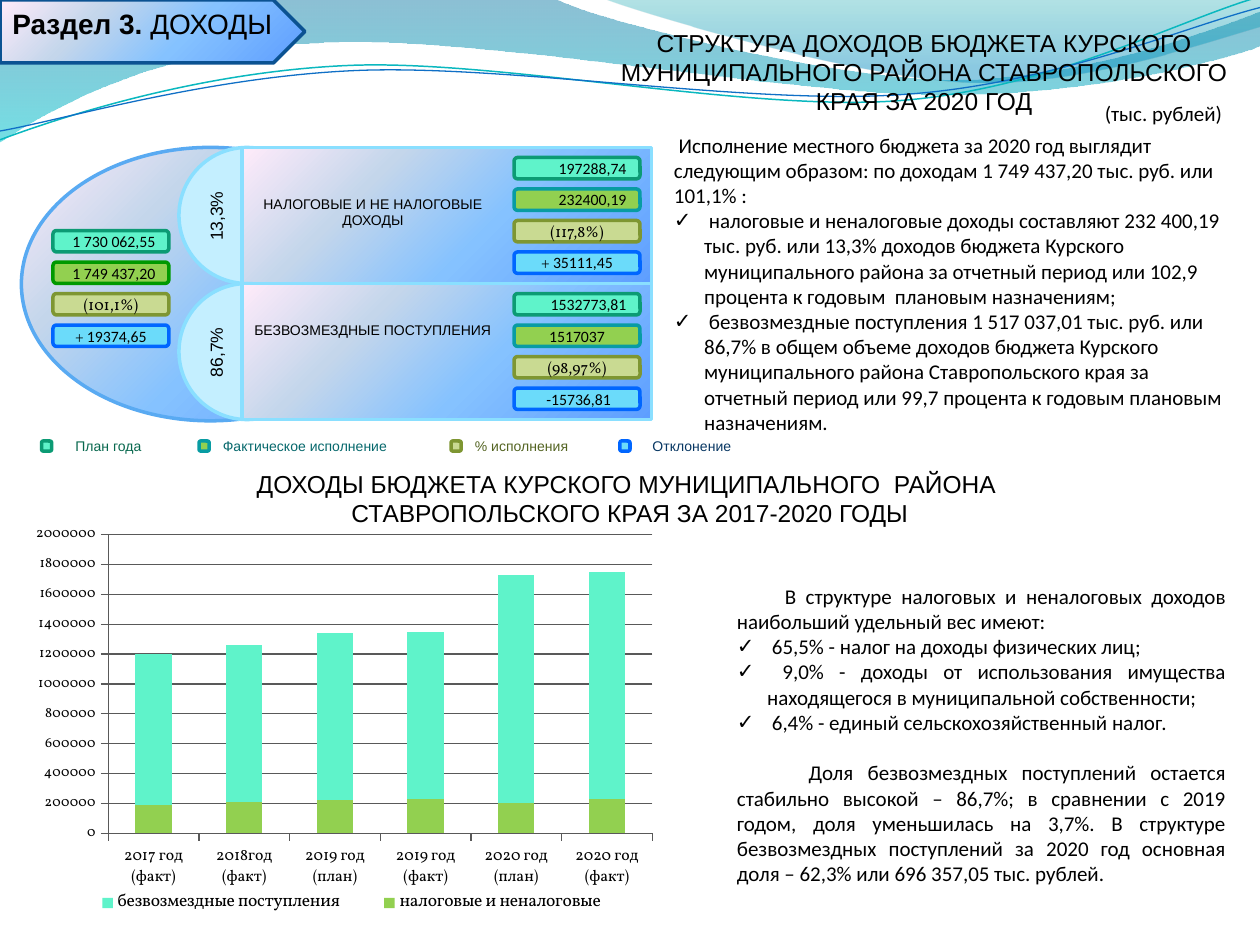
from lxml.etree import SubElement
from pptx import Presentation
from pptx.chart.data import CategoryChartData
from pptx.dml.color import RGBColor
from pptx.enum.chart import XL_CHART_TYPE, XL_LEGEND_POSITION, XL_TICK_MARK
from pptx.enum.shapes import MSO_SHAPE
from pptx.enum.text import MSO_ANCHOR, PP_ALIGN
from pptx.oxml.ns import qn
from pptx.util import Inches, Pt

LEFT, CENTER, RIGHT, JUSTIFY = PP_ALIGN.LEFT, PP_ALIGN.CENTER, PP_ALIGN.RIGHT, PP_ALIGN.JUSTIFY
SKY = [(0, "5E9EFF", 100), (40, "85C2FF", 100), (70, "C4D6EB", 100), (100, "FFEBFA", 100)]
INDICATORS = [("5FF3CA", "0C9B74"), ("92D050", "089CA3"), ("C9DA92", "7E9632"), ("6BDBFA", "0066FF")]


def rgb(value):
    return RGBColor.from_string(value)


def child(parent, tag, **attributes):
    return SubElement(parent, qn(tag), {key: str(value) for key, value in attributes.items()})


def write(frame, text, size=12, font="Calibri", color="000000", bold=False, align=LEFT,
          join=False, bullet=False, first_indent=0, before=0):
    paragraph = frame.paragraphs[-1]
    if paragraph.runs and not join:
        paragraph = frame.add_paragraph()
    paragraph.alignment = align
    if before:
        paragraph.space_before = Pt(before)
    properties = paragraph._p.get_or_add_pPr()
    if bullet:
        properties.set("marL", str(Inches(0.24)))
        properties.set("indent", str(-Inches(0.24)))
        child(properties, "a:buFont", typeface="Arial")
        child(properties, "a:buChar", char="✓")
    elif first_indent:
        properties.set("indent", str(Inches(first_indent)))
    run = paragraph.add_run()
    run.text = text
    run.font.size, run.font.name, run.font.bold = Pt(size), font, bold
    run.font.color.rgb = rgb(color)


class SlideBuilder:
    def __init__(self, slide):
        self.slide = slide

    def paint(self, shape, fill=None, line=None, width=2, angle=225):
        shape.shadow.inherit = False
        if isinstance(fill, str):
            shape.fill.solid()
            shape.fill.fore_color.rgb = rgb(fill)
        else:
            shape.fill.background()
        if isinstance(fill, list):
            properties = shape.element.spPr
            blank = properties.find(qn("a:noFill"))
            gradient = child(properties, "a:gradFill", rotWithShape=1)
            properties.replace(blank, gradient)
            stops = child(gradient, "a:gsLst")
            for position, color, opacity in fill:
                stop = child(stops, "a:gs", pos=position * 1000)
                tint = child(stop, "a:srgbClr", val=color)
                if opacity < 100:
                    child(tint, "a:alpha", val=opacity * 1000)
            child(gradient, "a:lin", ang=angle * 60000, scaled=0)
        if line:
            shape.line.color.rgb = rgb(line)
            shape.line.width = Pt(width)
        else:
            shape.line.fill.background()

    def shape(self, kind, box, fill, line):
        shape = self.slide.shapes.add_shape(kind, *map(Inches, box))
        self.paint(shape, fill, line)
        return shape

    def wave(self, start, segments, closed=True, **look):
        builder = self.slide.shapes.build_freeform(*map(Inches, start), scale=1.0)
        builder.add_line_segments([tuple(map(Inches, segment[-2:])) for segment in segments], close=closed)
        shape = builder.convert_to_shape()
        straights = list(shape.element.iter(qn("a:lnTo")))
        for straight, segment in zip(straights, segments):
            if len(segment) == 6:
                outline = straight.getparent()
                curve = child(outline, "a:cubicBezTo")
                for x, y in zip(segment[::2], segment[1::2]):
                    child(curve, "a:pt", x=Inches(x) - shape.left, y=Inches(y) - shape.top)
                outline.replace(straight, curve)
        self.paint(shape, **look)

    def text(self, box, *lines, rotation=0, wrap=True, **look):
        label = self.slide.shapes.add_textbox(*map(Inches, box))
        label.rotation = rotation
        label.text_frame.word_wrap = wrap
        for line in lines:
            content, extra = line if isinstance(line, tuple) else (line, {})
            write(label.text_frame, content, **{**look, **extra})

    def badges(self, left, top, width, values, outlines=None):
        for row, (sign, value, align) in enumerate(values):
            fill, line = INDICATORS[row]
            line = (outlines or {}).get(row, line)
            badge = self.shape(MSO_SHAPE.ROUNDED_RECTANGLE, (left, top + 0.25 * row, width, 0.17), fill, line)
            frame = badge.text_frame
            frame.word_wrap = True
            frame.vertical_anchor = MSO_ANCHOR.MIDDLE
            if sign:
                write(frame, sign, size=9, font="Vollkorn", align=align)
            font = "Vollkorn" if value.startswith("(") else "Calibri"
            write(frame, value, size=9, font=font, align=align, join=True)

    def stacked_chart(self, box, categories, series):
        data = CategoryChartData()
        data.categories = categories
        for name, values, _ in series:
            data.add_series(name, values)
        chart = self.slide.shapes.add_chart(XL_CHART_TYPE.COLUMN_STACKED, *map(Inches, box), data).chart
        chart.has_title = False
        chart.font.size, chart.font.name = Pt(14), "Vollkorn"
        chart.font.color.rgb = rgb("000000")
        plot = chart.plots[0]
        plot.gap_width, plot.overlap, plot.vary_by_categories = 150, 100, False
        for bars, (_, _, color) in zip(plot.series, series):
            bars.format.fill.solid()
            bars.format.fill.fore_color.rgb = rgb(color)
        values_axis = chart.value_axis
        values_axis.minimum_scale, values_axis.maximum_scale, values_axis.major_unit = 0, 2000000, 200000
        values_axis.tick_labels.number_format = "General"
        values_axis.tick_labels.number_format_is_linked = False
        for axis, size in ((chart.category_axis, 9), (values_axis, 8)):
            axis.tick_labels.font.size = Pt(size)
            axis.major_tick_mark = XL_TICK_MARK.OUTSIDE
            axis.format.line.color.rgb = rgb("595959")
        values_axis.major_gridlines.format.line.color.rgb = rgb("595959")
        chart.has_legend = True
        chart.legend.position = XL_LEGEND_POSITION.RIGHT
        chart.legend.include_in_layout = False
        chart.legend.font.size = Pt(10)
        self.place(plot._element.getparent(), (0.12, 0.05, 0.85, 0.73), True)
        self.place(chart.legend._element, (0.05, 0.9, 0.9, 0.1))

    def place(self, part, box, inner=False):
        for old in part.findall(qn("c:layout")):
            part.remove(old)
        layout = child(part, "c:layout")
        manual = child(layout, "c:manualLayout")
        if inner:
            child(manual, "c:layoutTarget", val="inner")
        for tag in ("xMode", "yMode"):
            child(manual, "c:" + tag, val="edge")
        for tag, value in zip("xywh", box):
            child(manual, "c:" + tag, val=value)
        position = part.find(qn("c:legendPos"))
        part.insert(0 if position is None else part.index(position) + 1, layout)


def main():
    deck = Presentation()
    deck.slide_width, deck.slide_height = Inches(10), Inches(7.5)
    page = SlideBuilder(deck.slides.add_slide(deck.slide_layouts[6]))

    page.wave((0, 0), [(4.4, -0.01), (4.76, 0.17, 6.64, 0.63, 7.58, 0.63), (8.53, 0.63, 9.58, 0.26, 10, 0.09),
                       (10.01, 0.36), (9.83, 0.44, 8.7, 0.76, 7.46, 0.75), (6.22, 0.75, 3.82, 0.28, 2.57, 0.34),
                       (1.29, 0.36, 0.46, 0.83, -0.01, 1.13), (0, 0)],
              fill=[(0, "0074A1", 45), (100, "00C6CF", 55)], angle=90)
    page.wave((4.79, -0.01), [(5.09, 0.11, 6.82, 0.62, 7.69, 0.65), (8.56, 0.69, 9.61, 0.32, 10, 0.21),
                              (10, 0), (4.79, -0.01)],
              fill=[(0, "00A1A9", 30), (80, "008BBF", 45)], angle=90)
    page.wave((0, 1.11), [(0.48, 0.93, 1.58, 0.57, 2.77, 0.52), (3.95, 0.47, 5.93, 0.89, 7.13, 0.8),
                          (8.33, 0.71, 9.38, 0.15, 9.98, -0.02)], closed=False, line="0AB8BF", width=0.85)
    page.wave((0, 1.04), [(0.47, 0.96, 1.64, 0.61, 2.83, 0.56), (4.03, 0.51, 5.97, 0.84, 7.17, 0.75),
                          (8.36, 0.67, 9.41, 0.21, 10, 0.06)], closed=False, line="0F6FC6", width=0.75)

    page.shape(MSO_SHAPE.PENTAGON, (0, 0, 2.42, 0.5), SKY, "0B5292")
    page.text((0, 0, 3.92, 0.37), ("Раздел 3. ", {"bold": True}), ("ДОХОДЫ", {"join": True}), size=16, font="Arial")
    page.text((4.67, 0.17, 5.33, 0.81),
              "СТРУКТУРА ДОХОДОВ БЮДЖЕТА КУРСКОГО МУНИЦИПАЛЬНОГО РАЙОНА СТАВРОПОЛЬСКОГО КРАЯ ЗА 2020 ГОД",
              size=14, font="Arial", align=CENTER)
    page.text((8.67, 0.75, 1.14, 0.3), "(тыс. рублей)", wrap=False)
    item = {"bullet": True}
    page.text((5.25, 1, 4.58, 3.53),
              " Исполнение местного бюджета за 2020 год выглядит следующим образом: "
              "по доходам 1 749 437,20 тыс. руб. или 101,1% :",
              (" налоговые и неналоговые доходы составляют 232 400,19 тыс. руб. или 13,3% доходов бюджета Курского "
               "муниципального района за отчетный период или 102,9 процента к годовым  плановым назначениям;", item),
              (" безвозмездные поступления 1 517 037,01 тыс. руб. или 86,7% в общем объеме доходов бюджета Курского "
               "муниципального района Ставропольского края за отчетный период или 99,7 процента "
               "к годовым плановым назначениям.", item))

    page.shape(MSO_SHAPE.OVAL, (0.17, 1.17, 3, 2.17), SKY, "59AAF2")
    income_groups = [
        (1.17, 1.5, "НАЛОГОВЫЕ И НЕ НАЛОГОВЫЕ ДОХОДЫ", "13,3%",
         [("", "197288,74", RIGHT), ("", "232400,19", RIGHT), ("", "(117,8%)", CENTER), ("+ ", "35111,45", CENTER)]),
        (2.25, 2.5, "БЕЗВОЗМЕЗДНЫЕ ПОСТУПЛЕНИЯ", "86,7%",
         [("", "1532773,81", RIGHT), ("", "1517037", CENTER), ("", "(98,97%)", CENTER), (" ", "-15736,81", CENTER)])]
    for top, name_top, name, share, values in income_groups:
        page.shape(MSO_SHAPE.OVAL, (1.42, top, 1.08, 1.08), "C4EFFF", "8ADFFF")
        page.shape(MSO_SHAPE.RECTANGLE, (1.92, top, 3.25, 1.08), SKY, "8ADFFF")
        page.text((1.9, name_top, 2.12, 0.37), name, size=8, font="Arial", align=CENTER)
        page.text((1.42, top + 0.41, 0.59, 0.27), share, rotation=270, size=10, font="Arial")
        page.badges(4.08, top + 0.08, 1, values)
    page.badges(0.42, 1.83, 0.92, [("", "1 730 062,55", RIGHT), ("", "1 749 437,20", RIGHT),
                                   ("", "(101,1%)", CENTER), ("+ ", "19374,65", CENTER)], {1: "009900"})

    legend = [(0.33, 0.5, 0.75, "План года", "08684E"), (1.58, 1.67, 1.75, "Фактическое исполнение", "06686C"),
              (3.58, 3.67, 1.08, "% исполнения", "546422"), (4.92, 5.08, 1, "Отклонение", "083763")]
    for (marker, left, width, name, color), (fill, line) in zip(legend, INDICATORS):
        page.shape(MSO_SHAPE.ROUNDED_RECTANGLE, (marker, 3.5, 0.08, 0.08), fill, line)
        page.text((left, 3.42, width, 0.24), name, size=8, font="Arial", color=color)

    page.text((0, 3.67, 10, 0.57), "ДОХОДЫ БЮДЖЕТА КУРСКОГО МУНИЦИПАЛЬНОГО  РАЙОНА ",
              "СТАВРОПОЛЬСКОГО КРАЯ ЗА 2017-2020 ГОДЫ", size=14, font="Arial", align=CENTER)
    page.stacked_chart((0.25, 4.08, 5.08, 3.25),
                       ["2017 год (факт)", "2018год (факт)", "2019 год (план)",
                        "2019 год (факт)", "2020 год (план)", "2020 год (факт)"],
                       [("налоговые и неналоговые", [190000, 210000, 220000, 230000, 200000, 230000], "92D050"),
                        ("безвозмездные поступления",
                         [1010000, 1050000, 1120000, 1120000, 1530000, 1520000], "5FF3CA")])
    page.text((5.75, 4.58, 4.08, 2.73),
              ("В структуре налоговых и неналоговых доходов наибольший удельный вес имеют:", {"first_indent": 0.38}),
              (" 65,5% - налог на доходы физических лиц;", item),
              (" 9,0% - доходы от использования имущества находящегося в муниципальной собственности;", item),
              (" 6,4% - единый сельскохозяйственный налог.", item),
              ("Доля безвозмездных поступлений остается стабильно высокой – 86,7%; в сравнении с 2019 годом, "
               "доля уменьшилась на 3,7%. В структуре безвозмездных поступлений за 2020 год основная доля – 62,3% "
               "или 696 357,05 тыс. рублей.", {"first_indent": 0.57, "before": 14.6}), align=JUSTIFY)
    deck.save("out.pptx")


if __name__ == "__main__":
    main()
